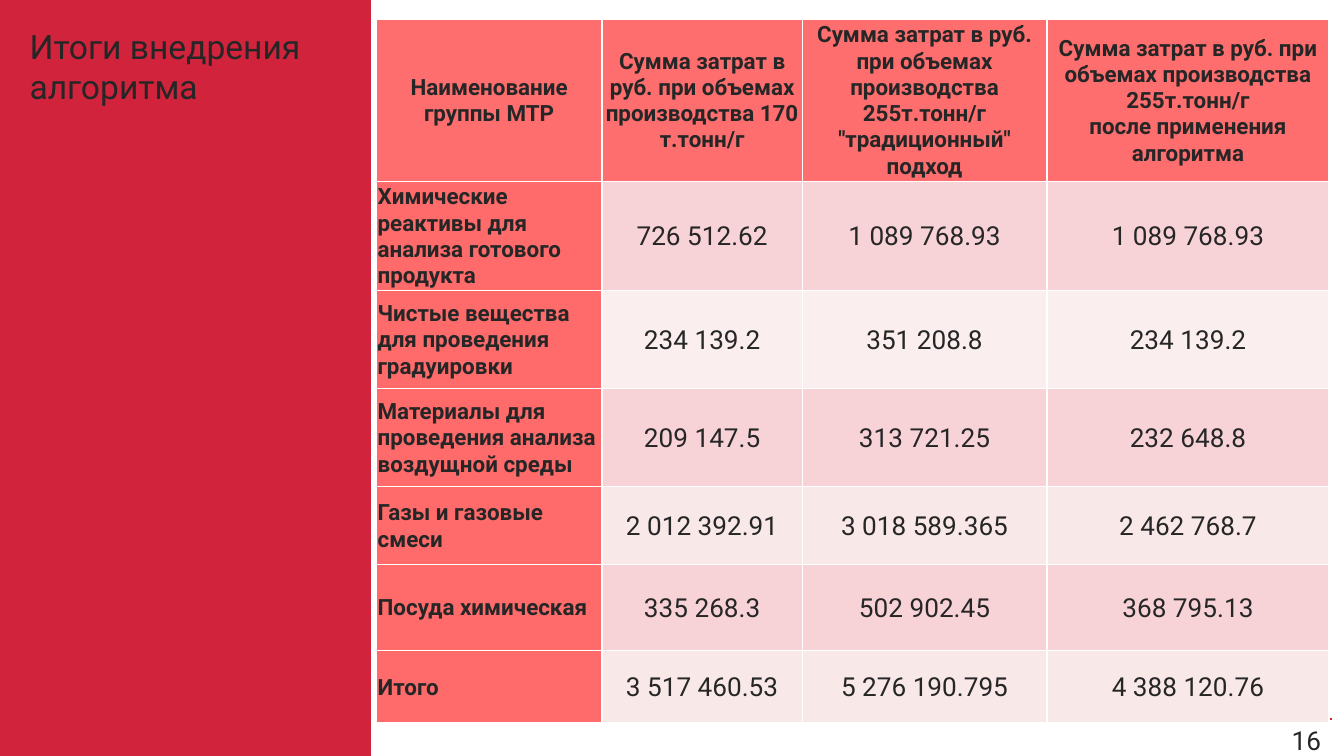
from dataclasses import dataclass

from lxml.etree import SubElement
from pptx import Presentation
from pptx.dml.color import RGBColor
from pptx.enum.shapes import MSO_CONNECTOR, MSO_SHAPE
from pptx.enum.text import MSO_ANCHOR, MSO_AUTO_SIZE, PP_ALIGN
from pptx.oxml import parse_xml
from pptx.oxml.ns import nsdecls, qn
from pptx.util import Inches, Pt

FONT, INK, RED = "Roboto", "262626", "D2233C"
ROSE, PALE = "F7D2D7", "F9E8E8"


@dataclass
class Row:
    height: float
    name: str
    sums: tuple[str, ...]
    fill: str
    alpha: int = 100


COLS = (1.68, 1.49, 1.82, 2.1)
HEAD_H = 1.07
HEADS = (
    "Наименование группы МТР",
    "Сумма затрат в руб. при объемах производства 170 т.тонн/г",
    'Сумма затрат в руб. при объемах производства 255т.тонн/г\v"традиционный" подход',
    "Сумма затрат в руб. при объемах производства 255т.тонн/г\vпосле применения алгоритма",
)
ROWS = (
    Row(0.75, "Химические реактивы для анализа готового продукта",
        ("726 512.62", "1 089 768.93", "1 089 768.93"), ROSE),
    Row(0.73, "Чистые вещества для проведения градуировки",
        ("234 139.2", "351 208.8", "234 139.2"), PALE, 73),
    Row(0.73, "Материалы для проведения анализа воздущной среды",
        ("209 147.5", "313 721.25", "232 648.8"), ROSE),
    Row(0.58, "Газы и газовые смеси",
        ("2 012 392.91", "3 018 589.365", "2 462 768.7"), PALE),
    Row(0.64, "Посуда химическая",
        ("335 268.3", "502 902.45", "368 795.13"), ROSE),
    Row(0.54, "Итого",
        ("3 517 460.53", "5 276 190.795", "4 388 120.76"), PALE),
)


def color(code: str) -> RGBColor:
    return RGBColor.from_string(code)


def write(frame, text: str, *, size: float, bold: bool = False,
          align=PP_ALIGN.LEFT) -> None:
    frame.text = text
    for para in frame.paragraphs:
        para.alignment = align
        for run in para.runs:
            font = run.font
            font.name, font.size, font.bold = FONT, Pt(size), bold
            font.color.rgb = color(INK)


def paint(cell, fill: str, alpha: int) -> None:
    """Fill a cell and give it thin white borders."""
    cell.fill.solid()
    cell.fill.fore_color.rgb = color(fill)
    props = cell._tc.get_or_add_tcPr()
    if alpha < 100:
        tone = props.find(qn("a:solidFill"))[0]
        SubElement(tone, qn("a:alpha")).set("val", str(alpha * 1000))
    for spot, side in enumerate("LRTB"):
        props.insert(spot, parse_xml(
            f'<a:ln{side} {nsdecls("a")} w="12700"><a:solidFill>'
            f'<a:srgbClr val="FFFFFF"/></a:solidFill></a:ln{side}>'))


def put(cell, text: str, fill: str, alpha: int, **form) -> None:
    cell.margin_left = cell.margin_right = cell.margin_top = Inches(0.01)
    cell.margin_bottom = 0
    cell.vertical_anchor = MSO_ANCHOR.MIDDLE
    write(cell.text_frame, text, **form)
    paint(cell, fill, alpha)


def add_grid(shapes) -> None:
    heights = (HEAD_H, *(row.height for row in ROWS))
    grid = shapes.add_table(
        len(heights), len(COLS), Inches(2.8), Inches(0.14),
        Inches(sum(COLS)), Inches(sum(heights))).table
    for col, width in zip(grid.columns, COLS):
        col.width = Inches(width)
    for line, height in zip(grid.rows, heights):
        line.height = Inches(height)
    for c, head in enumerate(HEADS):
        put(grid.cell(0, c), head, "FF0000", 57,
            size=12, bold=True, align=PP_ALIGN.CENTER)
    for r, row in enumerate(ROWS, 1):
        put(grid.cell(r, 0), row.name, "FF0000", 58, size=12, bold=True)
        for c, total in enumerate(row.sums, 1):
            put(grid.cell(r, c), total, row.fill, row.alpha,
                size=14, align=PP_ALIGN.CENTER)


def main() -> None:
    deck = Presentation()
    # Widescreen, 16:9
    deck.slide_width = Inches(10)
    deck.slide_height = Inches(10 * 9 / 16)
    slide = deck.slides.add_slide(deck.slide_layouts[5])
    shapes = slide.shapes

    # Page number with its rule
    rule = shapes.add_connector(MSO_CONNECTOR.STRAIGHT, Inches(8.94),
                                Inches(5.35), Inches(9.91), Inches(5.35))
    rule.line.color.rgb = color(RED)
    rule.line.width = Pt(1.5)
    SubElement(rule.element.spPr, qn("a:effectLst"))
    page = shapes.add_textbox(Inches(8.94), Inches(5.35),
                              Inches(0.98), Inches(0.23)).text_frame
    page.word_wrap = True
    page.margin_left = page.margin_right = Inches(0.09)
    page.margin_top = page.margin_bottom = Inches(0.04)
    write(page, "16", size=14, align=PP_ALIGN.RIGHT)

    # Red side panel, full height
    panel = shapes.add_shape(MSO_SHAPE.RECTANGLE, 0, 0,
                             Inches(2.76), deck.slide_height)
    panel.shadow.inherit = False
    panel.fill.solid()
    panel.fill.fore_color.rgb = color(RED)
    panel.line.fill.background()

    # Title, in front of the panel
    title = shapes.title
    title.left, title.top = Inches(0.12), Inches(0.14)
    title.width, title.height = Inches(2.27), Inches(0.71)
    frame = title.text_frame
    frame.word_wrap = False
    frame.auto_size = MSO_AUTO_SIZE.SHAPE_TO_FIT_TEXT
    frame.vertical_anchor = MSO_ANCHOR.TOP
    write(frame, "Итоги внедрения\nалгоритма", size=18)
    panel.element.addnext(title.element)

    # Cost table
    add_grid(shapes)
    deck.save("out.pptx")


if __name__ == "__main__":
    main()
